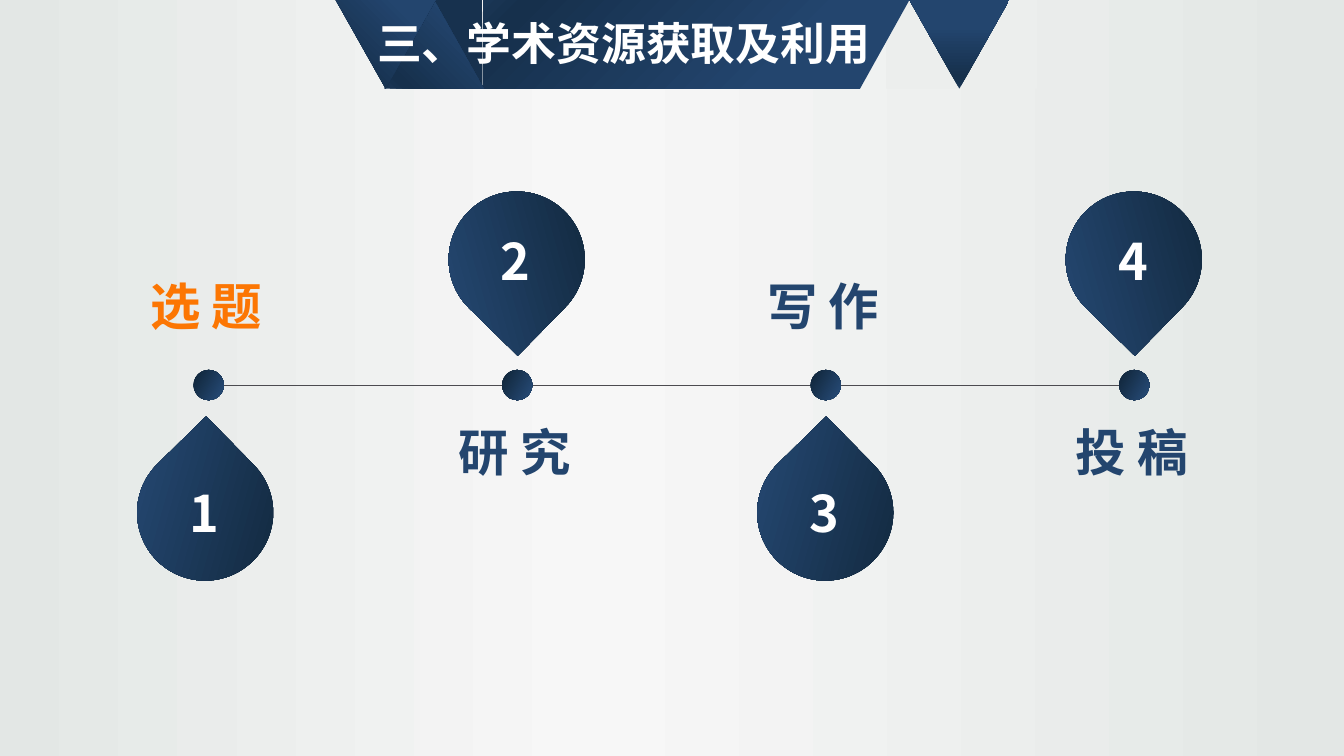
from lxml import etree
from pptx import Presentation
from pptx.dml.color import RGBColor
from pptx.enum.shapes import MSO_CONNECTOR, MSO_SHAPE
from pptx.enum.text import MSO_ANCHOR, MSO_AUTO_SIZE, PP_ALIGN
from pptx.oxml.ns import qn
from pptx.util import Inches, Pt

RECT, OVAL, TEAR = MSO_SHAPE.RECTANGLE, MSO_SHAPE.OVAL, MSO_SHAPE.TEAR
TRIANGLE, CORNER = MSO_SHAPE.ISOSCELES_TRIANGLE, MSO_SHAPE.RIGHT_TRIANGLE
STRAIGHT = MSO_CONNECTOR.STRAIGHT
LEFT, TOP, NO_FIT = PP_ALIGN.LEFT, MSO_ANCHOR.TOP, MSO_AUTO_SIZE.NONE

# Content
TITLE = "三、学术资源获取及利用"
STEPS = [  # label, pin left, pin above the line
    ("选 题", 1.36, False),
    ("研 究", 4.45, True),
    ("写 作", 7.51, False),
    ("投 稿", 10.57, True),
]
CURRENT = 0
FONT = "Noto Sans CJK SC"
NAVY, ORANGE, WHITE, GREY = "23456E", "FC7603", "FFFFFF", "4C4B50"
BACKDROP = ([(1, "E3E7E5"), (56, "F7F7F7"), (100, "E3E7E5")], 180)
PIN_FILL = ([(0, "0F2437"), (100, "284D7A")], 30)


def fold(middle, end, angle):
    return [(0, "1A3655"), (middle, "16304C"), (end, NAVY)], angle


# Banner facets: shape, left, width, flips, fill
BANNER_H = 0.88
BANNER = [
    (RECT, 8.79, 1.5, "", "ECEEED"),
    (CORNER, 8.53, 0.49, "V", NAVY),
    (RECT, 4.79, 3.74, "", fold(10, 78, 45)),
    (CORNER, 4.29, 0.49, "HV", "17314E"),
    (TRIANGLE, 3.81, 0.99, "", fold(13, 78, 315)),
    (TRIANGLE, 3.33, 0.99, "HV", fold(17, 78, 135)),
    (TRIANGLE, 9.02, 0.99, "HV", fold(13, 70, 90)),
]

# Timeline grid
PITCH, LABEL_X, DOT_X = 3.06, 1.39, 1.92
LINE_Y, DOT, PIN = 3.82, 0.3, 1.35
PIN_Y = {True: 1.9, False: 4.41}
NUMBER_Y = {True: 2.23, False: 4.73}
LABEL_Y = {True: 4.13, False: 2.68}


def color(value):
    return RGBColor.from_string(value)


def paint(fill, parent, value):
    fill.solid()
    if isinstance(value, str):
        fill.fore_color.rgb = color(value)
        return
    stops, angle = value
    grad = etree.Element(qn("a:gradFill"), rotWithShape="1")
    gs_list = etree.SubElement(grad, qn("a:gsLst"))
    for pos, rgb in stops:
        gs = etree.SubElement(gs_list, qn("a:gs"), pos=str(pos * 1000))
        etree.SubElement(gs, qn("a:srgbClr"), val=rgb)
    etree.SubElement(grad, qn("a:lin"), ang=str(angle * 60000), scaled="0")
    parent.replace(parent.find(qn("a:solidFill")), grad)


def add_part(s, kind, x, y, w, h, fill, flips="", rotation=0):
    sp = s.shapes.add_shape(kind, Inches(x), Inches(y), Inches(w), Inches(h))
    sp.shadow.inherit = False
    sp.line.fill.background()
    sp.rotation = rotation
    sp_pr = sp.element.find(qn("p:spPr"))
    paint(sp.fill, sp_pr, fill)
    for axis in flips:
        sp_pr.find(qn("a:xfrm")).set("flip" + axis, "1")


def write(tf, text, size, rgb):
    p = tf.paragraphs[0]
    p.alignment = LEFT
    r = p.add_run()
    r.text = text
    r.font.size, r.font.bold, r.font.name = Pt(size), True, FONT
    r.font.color.rgb = color(rgb)
    latin = r.font._element.find(qn("a:latin"))
    latin.addnext(etree.Element(qn("a:ea"), typeface=FONT))


def add_text(s, text, x, y, w, rgb):
    box = s.shapes.add_textbox(Inches(x), Inches(y), Inches(w), Inches(0.71))
    box.text_frame.word_wrap = False
    write(box.text_frame, text, 36, rgb)


def main():
    prs = Presentation()
    prs.slide_width, prs.slide_height = Inches(13.33), Inches(7.5)
    s = prs.slides.add_slide(prs.slide_layouts[5])

    # Background
    fill = s.background.fill
    fill.solid()
    paint(fill, s.element.find(".//" + qn("p:bgPr")), BACKDROP)

    # Timeline
    line = s.shapes.add_connector(STRAIGHT, Inches(1.93), Inches(LINE_Y),
                                  Inches(11.38), Inches(LINE_Y))
    line.line.color.rgb, line.line.width = color(GREY), Pt(0.5)
    etree.SubElement(line.element.find(qn("p:spPr")), qn("a:effectLst"))
    for i in range(len(STEPS)):
        add_part(s, OVAL, DOT_X + i * PITCH, LINE_Y - DOT / 2, DOT, DOT, PIN_FILL)

    # Pins, numbers and labels
    for i, (label, x, above) in enumerate(STEPS):
        flips, turn = ("", 134.4) if above else ("V", 225.6)
        add_part(s, TEAR, x, PIN_Y[above], PIN, PIN, PIN_FILL, flips, turn)
        add_text(s, str(i + 1), x + 0.42, NUMBER_Y[above], 0.51, WHITE)
        add_text(s, label, LABEL_X + i * PITCH, LABEL_Y[above], PIN,
                 ORANGE if i == CURRENT else NAVY)

    # Banner
    for kind, x, w, flips, fill in BANNER:
        add_part(s, kind, x, 0, w, BANNER_H, fill, flips)

    # Title, brought in front of the banner
    title = s.shapes.title
    title.left, title.top = Inches(3.64), Inches(0.11)
    title.width, title.height = Inches(5.12), Inches(0.64)
    tf = title.text_frame
    tf.word_wrap, tf.auto_size, tf.vertical_anchor = True, NO_FIT, TOP
    write(tf, TITLE, 32, WHITE)
    title.element.getparent().append(title.element)

    prs.save("out.pptx")


if __name__ == "__main__":
    main()
